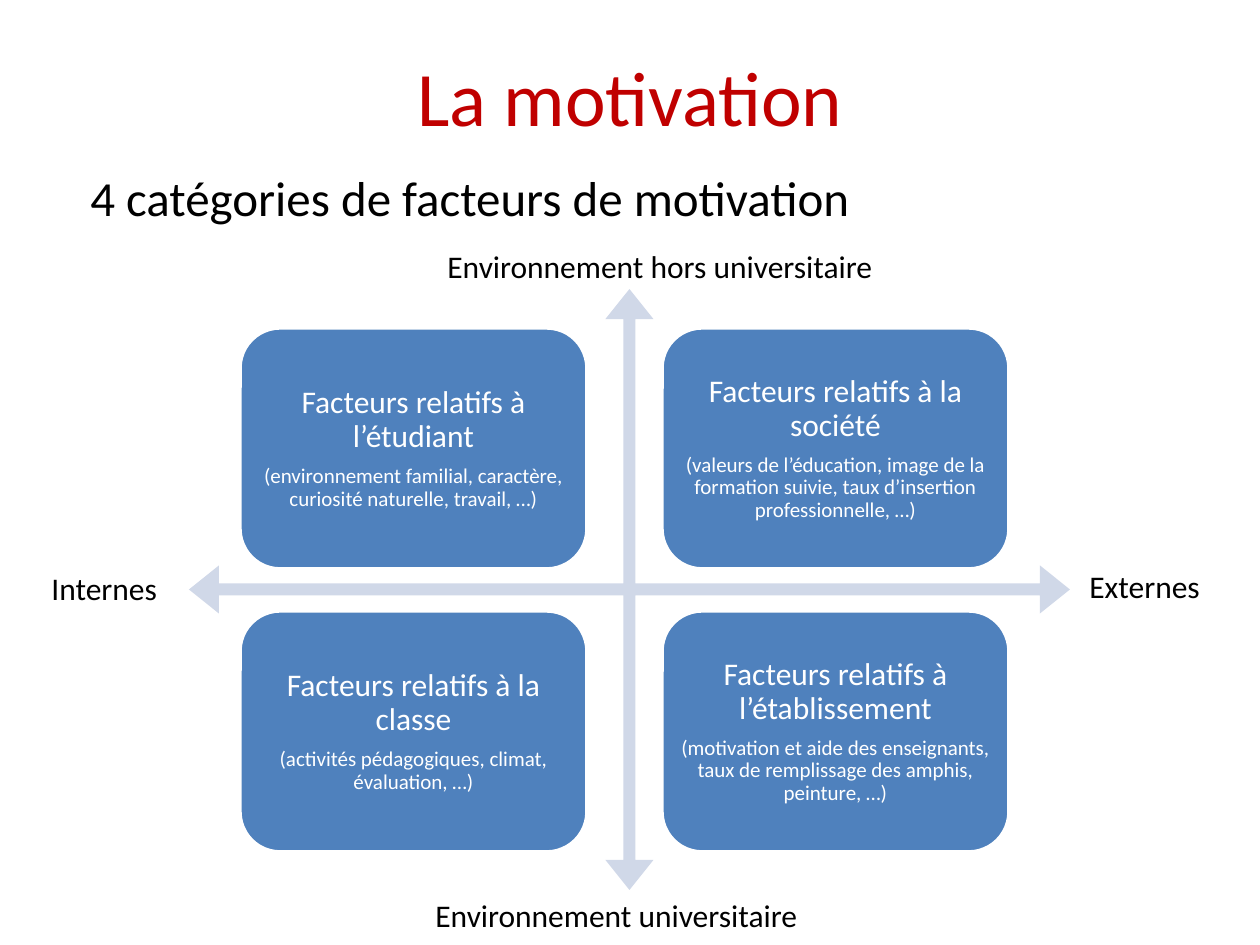
from dataclasses import dataclass

from pptx import Presentation
from pptx import util as u
from pptx.dml.color import RGBColor
from pptx.enum import shapes, text

TITLE = "La motivation"
SUBTITLE = "4 catégories de facteurs de motivation"
FACTORS = [  # two rows of two: heading, examples
    [("Facteurs relatifs à l’étudiant",
      "(environnement familial, caractère, curiosité naturelle, travail, …)"),
     ("Facteurs relatifs à la société",
      "(valeurs de l’éducation, image de la formation suivie, "
      "taux d’insertion professionnelle, …)")],
    [("Facteurs relatifs à la classe",
      "(activités pédagogiques, climat, évaluation, …)"),
     ("Facteurs relatifs à l’établissement",
      "(motivation et aide des enseignants, taux de remplissage des amphis, peinture, …)")],
]
AXIS_LABELS = [  # wording, box in px
    ("Internes", (39, 563, 132, 50)),
    ("Externes", (1077, 561, 137, 50)),
    ("Environnement universitaire", (423, 890, 392, 50)),
    ("Environnement hors universitaire", (435, 241, 455, 50)),
]

TITLE_BOX = (63, 38, 1134, 158)
SUBTITLE_BOX = (63, 161, 1134, 624)
AXES_BOX = (189, 289, 881, 601)
CARD_LEFT, CARD_TOP, CARD_WIDTH, CARD_HEIGHT = 240, 328, 347, 241
COLUMN_STEP, ROW_STEP = 422, 283


@dataclass(frozen=True)
class Theme:
    font: str = "Calibri"
    title: str = "C00000"
    body: str = "000000"
    card: str = "4F81BD"
    on_card: str = "FFFFFF"
    axes: str = "D0D8E8"
    title_size: int = 44
    subtitle_size: int = 28
    label_size: int = 18
    detail_size: int = 12


THEME = Theme()


def px(length):
    return u.Emu(round(length * 914400 / 126))


def box(bounds):
    return [px(length) for length in bounds]


def rgb(colour):
    return RGBColor.from_string(colour)


def write(paragraph, wording, size, colour):
    run = paragraph.add_run()
    run.text = wording
    run.font.name = THEME.font
    run.font.size = u.Pt(size)
    run.font.color.rgb = rgb(colour)


def add_title(slide):
    title = slide.shapes.title
    title.left, title.top, title.width, title.height = box(TITLE_BOX)
    frame = title.text_frame
    frame.vertical_anchor = text.MSO_ANCHOR.TOP
    frame.margin_top = px(11)
    frame.paragraphs[0].alignment = text.PP_ALIGN.CENTER
    write(frame.paragraphs[0], TITLE, THEME.title_size, THEME.title)


def add_subtitle(slide):
    frame = slide.shapes.add_textbox(*box(SUBTITLE_BOX)).text_frame
    frame.word_wrap = True
    paragraph = frame.paragraphs[0]
    paragraph.space_before = u.Pt(5.6)
    paragraph._p.get_or_add_pPr().set("marL", str(px(15)))
    write(paragraph, SUBTITLE, THEME.subtitle_size, THEME.body)


def add_axes(slide):
    axes = slide.shapes.add_shape(shapes.MSO_SHAPE.QUAD_ARROW, *box(AXES_BOX))
    axes.shadow.inherit = False
    for index, ratio in enumerate((0.02, 0.04, 0.05)):
        axes.adjustments[index] = ratio
    axes.fill.solid()
    axes.fill.fore_color.rgb = rgb(THEME.axes)
    axes.line.fill.background()


def add_card(slide, row, column, heading, examples):
    bounds = (CARD_LEFT + column * COLUMN_STEP, CARD_TOP + row * ROW_STEP,
              CARD_WIDTH, CARD_HEIGHT)
    card = slide.shapes.add_shape(shapes.MSO_SHAPE.ROUNDED_RECTANGLE, *box(bounds))
    card.shadow.inherit = False
    card.fill.solid()
    card.fill.fore_color.rgb = rgb(THEME.card)
    card.line.color.rgb = rgb(THEME.on_card)
    card.line.width = u.Pt(2)
    frame = card.text_frame
    frame.word_wrap = True
    frame.vertical_anchor = text.MSO_ANCHOR.MIDDLE
    # The rounded preset already insets its text by about 12 px.
    frame.margin_left = frame.margin_right = px(7)
    frame.margin_top = frame.margin_bottom = px(7)
    lines = [(heading, THEME.label_size), (examples, THEME.detail_size)]
    for index, (wording, size) in enumerate(lines):
        paragraph = frame.add_paragraph() if index else frame.paragraphs[0]
        paragraph.alignment = text.PP_ALIGN.CENTER
        paragraph.line_spacing = 0.9
        paragraph.space_after = u.Pt(size * 0.35)
        write(paragraph, wording, size, THEME.on_card)


def add_axis_label(slide, wording, bounds):
    frame = slide.shapes.add_textbox(*box(bounds)).text_frame
    frame.word_wrap = False
    frame.auto_size = text.MSO_AUTO_SIZE.SHAPE_TO_FIT_TEXT
    write(frame.paragraphs[0], wording, THEME.label_size, THEME.body)


def main():
    deck = Presentation()
    deck.slide_width, deck.slide_height = px(1260), px(945)
    slide = deck.slides.add_slide(deck.slide_layouts[5])
    add_title(slide)
    add_subtitle(slide)
    add_axes(slide)
    for row, cards in enumerate(FACTORS):
        for column, (heading, examples) in enumerate(cards):
            add_card(slide, row, column, heading, examples)
    for wording, bounds in AXIS_LABELS:
        add_axis_label(slide, wording, bounds)
    deck.save("out.pptx")


if __name__ == "__main__":
    main()
